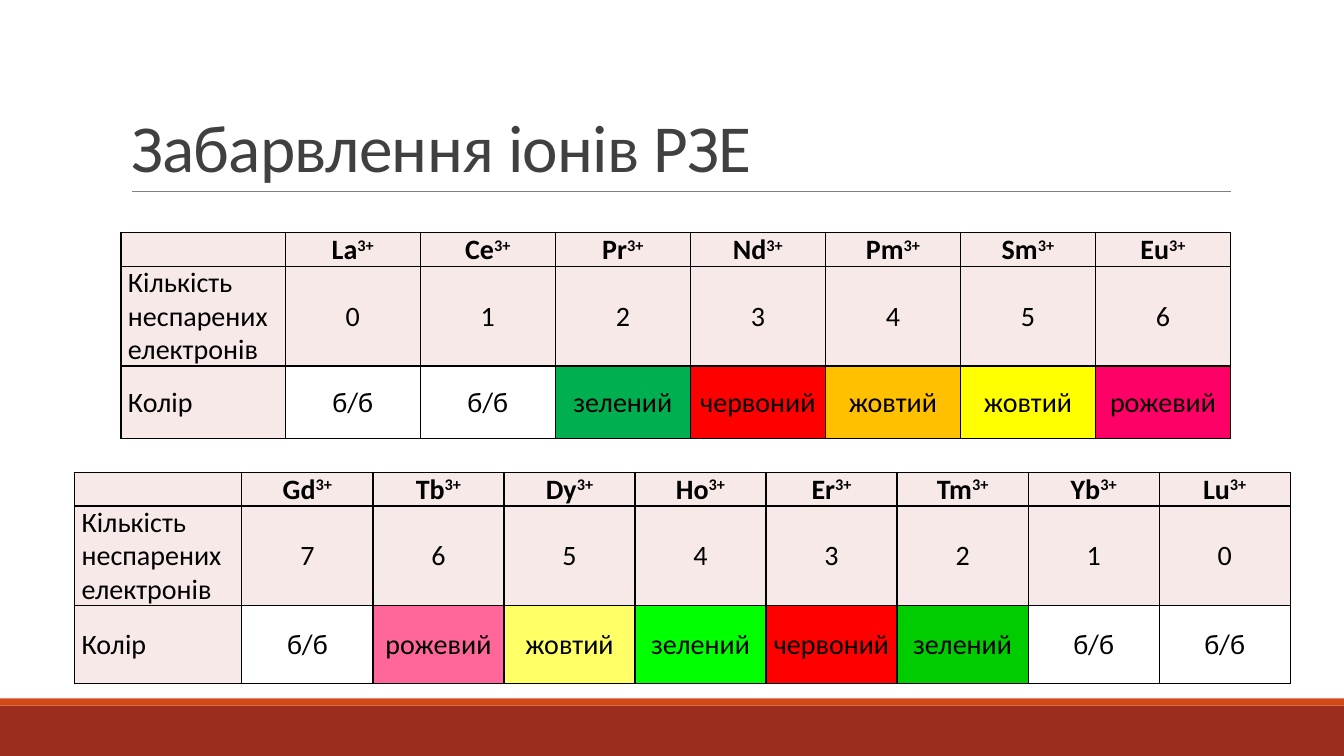
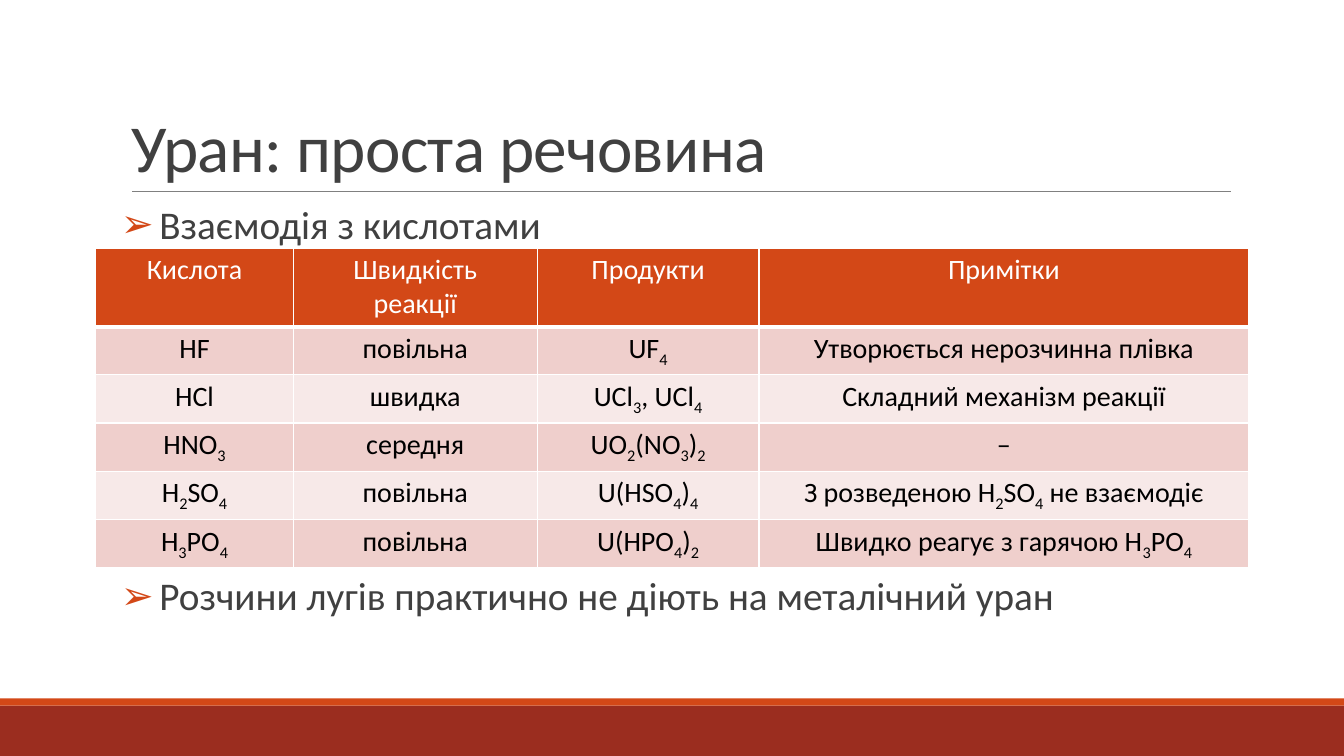
"""Build two chemistry slides: colours of rare-earth ions and reactions of uranium."""
from lxml.etree import SubElement
from pptx import Presentation
from pptx.dml.color import RGBColor
from pptx.enum.shapes import MSO_CONNECTOR, MSO_SHAPE
from pptx.enum.text import MSO_ANCHOR, MSO_AUTO_SIZE, PP_ALIGN
from pptx.oxml.ns import qn
from pptx.util import Inches, Pt

BLACK = RGBColor(0x00, 0x00, 0x00)
WHITE = RGBColor(0xFF, 0xFF, 0xFF)
INK = RGBColor(0x40, 0x40, 0x40)
RULE = RGBColor(0x80, 0x80, 0x80)
BRICK = RGBColor(0x9B, 0x2D, 0x1F)
ORANGE = RGBColor(0xD3, 0x48, 0x17)
PALE = RGBColor(0xF7, 0xE9, 0xE8)
ROSE = RGBColor(0xEF, 0xCF, 0xCC)
RED = RGBColor(0xFF, 0x00, 0x00)
GREEN = RGBColor(0x00, 0xB0, 0x50)
LIME = RGBColor(0x00, 0xFF, 0x00)
GRASS = RGBColor(0x00, 0xCC, 0x00)
AMBER = RGBColor(0xFF, 0xC0, 0x00)
YELLOW = RGBColor(0xFF, 0xFF, 0x00)
LEMON = RGBColor(0xFF, 0xFF, 0x66)
CRIMSON = RGBColor(0xFF, 0x00, 0x66)
PINK = RGBColor(0xFF, 0x66, 0x99)

SUPERSCRIPT, SUBSCRIPT = 30000, -25000
BULLET_INDENT = Inches(0.38)

prs = Presentation()
prs.slide_width, prs.slide_height = Inches(13.33), Inches(7.5)
COL, ROW = prs.slide_width / 160, prs.slide_height / 90


def write(frame, text, size=20, color=BLACK, bold=False, align=PP_ALIGN.CENTER,
          line_spacing=1.0, gap=0, shift=0, tracking=0):
    """Fill a text frame; lines become paragraphs and text between bars is shifted."""
    frame.word_wrap = True
    for number, line in enumerate(text.split("\n")):
        paragraph = frame.add_paragraph() if number else frame.paragraphs[0]
        paragraph.alignment = align
        paragraph.line_spacing = line_spacing
        paragraph.space_before = Pt(gap if number else 0)
        for position, chunk in enumerate(line.split("|")):
            if not chunk:
                continue
            run = paragraph.add_run()
            run.text = chunk
            run.font.name, run.font.size = "Calibri", Pt(size)
            run.font.bold, run.font.color.rgb = bold, color
            properties = run._r.get_or_add_rPr()
            if position % 2:
                properties.set("baseline", str(shift))
            if tracking:
                properties.set("spc", str(tracking))


def add_grid(slide, left, top, widths, heights, border, header_rule=1):
    """Add a plain table with borders, measured in grid columns and rows."""
    table = slide.shapes.add_table(
        len(heights), len(widths), int(left * COL), int(top * ROW),
        int(sum(widths) * COL), int(sum(heights) * ROW)).table
    table.first_row = table.horz_banding = False
    for column, width in zip(table.columns, widths):
        column.width = int(width * COL)
    for number, (row, height) in enumerate(zip(table.rows, heights)):
        row.height = int(height * ROW)
        weights = {"L": 1, "R": 1, "T": header_rule if number == 1 else 1,
                   "B": header_rule if number == 0 else 1}
        for cell in row.cells:
            properties = cell._tc.get_or_add_tcPr()
            for side, weight in weights.items():
                edge = SubElement(properties, qn("a:ln" + side), w=str(Pt(weight)))
                SubElement(SubElement(edge, qn("a:solidFill")), qn("a:srgbClr"), val=str(border))
    return table


slides = []
for heading, layout in [("Забарвлення іонів РЗЕ", 5), ("Уран: проста речовина", 1)]:
    slide = prs.slides.add_slide(prs.slide_layouts[layout])
    title = slide.shapes.title
    title.left, title.top = int(14.4 * COL), int(3.72 * ROW)
    title.width, title.height = int(132 * COL), int(19.08 * ROW)
    title.text_frame.vertical_anchor = MSO_ANCHOR.BOTTOM
    title.text_frame.auto_size = MSO_AUTO_SIZE.NONE
    write(title.text_frame, heading, size=48, color=INK, align=PP_ALIGN.LEFT,
          line_spacing=0.85, tracking=-50)
    slides.append(slide)
ions_slide, uranium_slide = slides

decor = []
for top, height, color in [(84, 6, BRICK), (83.16, 0.84, ORANGE)]:
    band = ions_slide.shapes.add_shape(
        MSO_SHAPE.RECTANGLE, 0, int(top * ROW), prs.slide_width, int(height * ROW))
    band.fill.solid()
    band.fill.fore_color.rgb = color
    band.line.fill.background()
    band.shadow.inherit = False
    decor.append(band)
title_rule = ions_slide.shapes.add_connector(
    MSO_CONNECTOR.STRAIGHT, int(15.72 * COL), int(22.8 * ROW), int(146.52 * COL), int(22.8 * ROW))
title_rule.line.color.rgb, title_rule.line.width = RULE, Pt(0.5)
SubElement(title_rule.element.spPr, qn("a:effectLst"))
decor.append(title_rule)
for number, part in enumerate(decor, 20):
    part.element.xpath(".//p:cNvPr")[0].set("id", str(number))
    prs.slide_master.shapes.element.append(part.element)

light_ions = [
    ("La", 0, "б/б", WHITE), ("Ce", 1, "б/б", WHITE), ("Pr", 2, "зелений", GREEN),
    ("Nd", 3, "червоний", RED), ("Pm", 4, "жовтий", AMBER), ("Sm", 5, "жовтий", YELLOW),
    ("Eu", 6, "рожевий", CRIMSON)]
heavy_ions = [
    ("Gd", 7, "б/б", WHITE), ("Tb", 6, "рожевий", PINK), ("Dy", 5, "жовтий", LEMON),
    ("Ho", 4, "зелений", LIME), ("Er", 3, "червоний", RED), ("Tm", 2, "зелений", GRASS),
    ("Yb", 1, "б/б", WHITE), ("Lu", 0, "б/б", WHITE)]
for ions, left, top, label_width, ion_width, color_height in [
        (light_ions, 14.4, 27.72, 19.56, 16.08, 8.64),
        (heavy_ions, 8.88, 56.28, 19.92, 15.6, 9.24)]:
    table = add_grid(ions_slide, left, top, [label_width] + [ion_width] * len(ions),
                     [3.96, 11.88, color_height], BLACK)
    columns = [("", "Кількість неспарених електронів", "Колір", PALE)]
    columns += [(f"{ion}|3+|", str(electrons), name, tint) for ion, electrons, name, tint in ions]
    for x, (*texts, tint) in enumerate(columns):
        for y, text in enumerate(texts):
            cell = table.cell(y, x)
            cell.vertical_anchor = MSO_ANCHOR.MIDDLE
            cell.margin_left = cell.margin_right = Inches(0.07)
            cell.margin_top = cell.margin_bottom = 0
            cell.fill.solid()
            cell.fill.fore_color.rgb = tint if y == 2 else PALE
            write(cell.text_frame, text, bold=y == 0, line_spacing=0.97, shift=SUPERSCRIPT,
                  align=PP_ALIGN.CENTER if x else PP_ALIGN.JUSTIFY)

body = uranium_slide.placeholders[1]
body.left, body.top = int(14.4 * COL), int(23.88 * ROW)
body.width, body.height = int(132 * COL), int(59.76 * ROW)
body.text_frame.margin_left = body.text_frame.margin_right = 0
body.text_frame.auto_size = MSO_AUTO_SIZE.NONE
write(body.text_frame, "Взаємодія з кислотами\nРозчини лугів практично не діють на металічний уран",
      size=28, color=INK, align=PP_ALIGN.LEFT, line_spacing=0.9, gap=235)
for paragraph in body.text_frame.paragraphs:
    properties = paragraph._p.get_or_add_pPr()
    properties.set("marL", str(BULLET_INDENT))
    properties.set("indent", str(-BULLET_INDENT))
    SubElement(SubElement(properties, qn("a:buClr")), qn("a:srgbClr"), val=str(ORANGE))
    SubElement(properties, qn("a:buFont"), typeface="Calibri")
    SubElement(properties, qn("a:buChar"), char="➢")

reactions = [
    ("Кислота", "Швидкість\nреакції", "Продукти", "Примітки"),
    ("HF", "повільна", "UF|4|", "Утворюється нерозчинна плівка"),
    ("HCl", "швидка", "UCl|3|, UCl|4|", "Складний механізм реакції"),
    ("HNO|3|", "середня", "UO|2|(NO|3|)|2|", "–"),
    ("H|2|SO|4|", "повільна", "U(HSO|4|)|4|", "З розведеною H|2|SO|4| не взаємодіє"),
    ("H|3|PO|4|", "повільна", "U(HPO|4|)|2|", "Швидко реагує з гарячою H|3|PO|4|")]
table = add_grid(uranium_slide, 11.4, 29.52, [23.52, 29.04, 26.4, 58.32],
                 [9.12] + [5.73] * 5, WHITE, header_rule=3)
for y, reaction in enumerate(reactions):
    for x, text in enumerate(reaction):
        cell = table.cell(y, x)
        cell.fill.solid()
        cell.fill.fore_color.rgb = ORANGE if y == 0 else ROSE if y % 2 else PALE
        write(cell.text_frame, text, color=BLACK if y else WHITE, shift=SUBSCRIPT)

prs.save("out.pptx")
